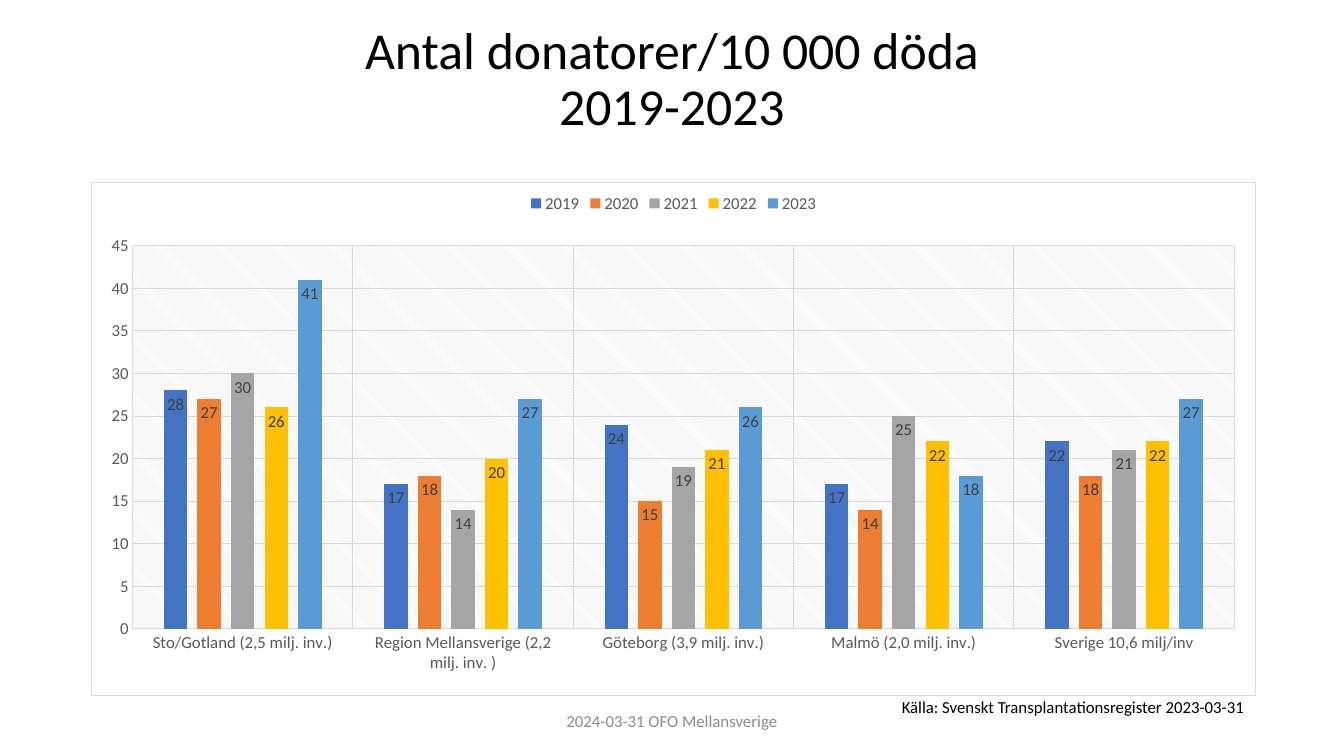
from dataclasses import dataclass

from lxml import etree
from pptx import Presentation
from pptx.chart import data
from pptx.dml.color import RGBColor
from pptx.enum import chart as kinds, text
from pptx.oxml import ns
from pptx.util import Pt

PX = 9525
FONT = "Calibri"
BLACK = RGBColor(0x00, 0x00, 0x00)
DARK = RGBColor(0x40, 0x40, 0x40)
GREY = RGBColor(0x59, 0x59, 0x59)
PALE = RGBColor(0x8C, 0x8C, 0x8C)
RULE = RGBColor(0xD9, 0xD9, 0xD9)
WHITE = RGBColor(0xFF, 0xFF, 0xFF)


@dataclass
class Box:
    left: int
    top: int
    width: int
    height: int

    def emu(self) -> list[int]:
        return [n * PX for n in (self.left, self.top, self.width, self.height)]


@dataclass
class Note:
    box: Box
    words: str
    color: RGBColor
    space: float


@dataclass
class Year:
    name: str
    color: RGBColor
    values: tuple[int, ...]


TITLE = Box(106, 18, 1068, 117)
GRAPH = Box(87, 173, 1109, 490)
NOTES = [
    Note(Box(777, 661, 490, 27), "Källa: Svenskt Transplantationsregister 2023-03-31", BLACK, 0.9),
    Note(Box(424, 667, 432, 38), "2024-03-31 OFO Mellansverige", PALE, 1.0),
]
REGIONS = [
    "Sto/Gotland (2,5 milj. inv.)",
    "Region Mellansverige (2,2 milj. inv. )",
    "Göteborg (3,9 milj. inv.)",
    "Malmö (2,0 milj. inv.)",
    "Sverige 10,6 milj/inv",
]
YEARS = [
    Year("2019", RGBColor(0x44, 0x72, 0xC4), (28, 17, 24, 17, 22)),
    Year("2020", RGBColor(0xED, 0x7D, 0x31), (27, 18, 15, 14, 18)),
    Year("2021", RGBColor(0xA5, 0xA5, 0xA5), (30, 14, 19, 25, 21)),
    Year("2022", RGBColor(0xFF, 0xC0, 0x00), (26, 20, 21, 22, 22)),
    Year("2023", RGBColor(0x5B, 0x9B, 0xD5), (41, 27, 26, 18, 27)),
]


def put(item, **values) -> None:
    for key, value in values.items():
        setattr(item, key, value)


def style(font, size: int, color: RGBColor) -> None:
    put(font, name=FONT, size=Pt(size))
    font.color.rgb = color


def rule(line) -> None:
    line.color.rgb = RULE
    line.width = Pt(0.75)


def node(inner: str, tag: str):
    return etree.fromstring(f'<c:{tag} {ns.nsdecls("c", "a")}>{inner}</c:{tag}>')


def solid(color: RGBColor) -> str:
    return f'<a:solidFill><a:srgbClr val="{color}"/></a:solidFill>'


def place(shape, box: Box) -> None:
    put(shape, **dict(zip(("left", "top", "width", "height"), box.emu())))


def head(slide) -> None:
    title = slide.shapes.title
    place(title, TITLE)
    put(title.text_frame, word_wrap=True, vertical_anchor=text.MSO_ANCHOR.MIDDLE,
        auto_size=text.MSO_AUTO_SIZE.NONE)
    para = title.text_frame.paragraphs[0]
    put(para, alignment=text.PP_ALIGN.CENTER, line_spacing=0.9)
    for part in ("Antal donatorer/10 000 döda", "2019-2023"):
        if para.runs:
            para.add_line_break()
        run = para.add_run()
        run.text = part
        style(run.font, 37, BLACK)


def write(slide, note: Note) -> None:
    frame = slide.shapes.add_textbox(*note.box.emu()).text_frame
    put(frame, word_wrap=True, vertical_anchor=text.MSO_ANCHOR.MIDDLE)
    para = frame.paragraphs[0]
    put(para, text=note.words, alignment=text.PP_ALIGN.CENTER,
        line_spacing=note.space, space_after=Pt(6))
    style(para.runs[0].font, 12, note.color)


def frame(chart) -> None:
    # Outer border, hatched plot area and its fixed position
    root = chart._chartSpace
    edge = f'<a:ln w="9525">{solid(RULE)}</a:ln>'
    root.find(ns.qn("c:chart")).addnext(node(solid(WHITE) + edge, "spPr"))
    area = root.find(".//" + ns.qn("c:plotArea"))
    for old in area.findall(ns.qn("c:layout")):
        area.remove(old)
    spots = {"x": 0.035, "y": 0.124, "w": 0.947, "h": 0.746}
    marks = '<c:layoutTarget val="inner"/><c:xMode val="edge"/><c:yMode val="edge"/>'
    marks += "".join(f'<c:{key} val="{val}"/>' for key, val in spots.items())
    area.insert(0, node(f"<c:manualLayout>{marks}</c:manualLayout>", "layout"))
    hatch = (f'<a:pattFill prst="ltDnDiag"><a:fgClr><a:srgbClr val="{RULE}"/></a:fgClr>'
             f'<a:bgClr><a:srgbClr val="{WHITE}"/></a:bgClr></a:pattFill>')
    area.append(node(hatch + "<a:ln><a:noFill/></a:ln>", "spPr"))


def graph(slide) -> None:
    table = data.CategoryChartData()
    table.categories = REGIONS
    for year in YEARS:
        table.add_series(year.name, year.values)
    kind = kinds.XL_CHART_TYPE.COLUMN_CLUSTERED
    chart = slide.shapes.add_chart(kind, *GRAPH.emu(), table).chart
    style(chart.font, 10, BLACK)
    put(chart, has_title=False, has_legend=True)
    put(chart.legend, position=kinds.XL_LEGEND_POSITION.TOP, include_in_layout=False)
    style(chart.legend.font, 12, GREY)

    # Axes
    for axis in (chart.category_axis, chart.value_axis):
        put(axis, has_major_gridlines=True, major_tick_mark=kinds.XL_TICK_MARK.NONE,
            minor_tick_mark=kinds.XL_TICK_MARK.NONE)
        rule(axis.major_gridlines.format.line)
        style(axis.tick_labels.font, 12, GREY)
    rule(chart.category_axis.format.line)
    chart.value_axis.format.line.fill.background()
    put(chart.value_axis, minimum_scale=0, maximum_scale=45, major_unit=5)

    # Bars and their values
    plot = chart.plots[0]
    put(plot, gap_width=267, overlap=-43, vary_by_categories=False)
    for bars, year in zip(plot.series, YEARS):
        bars.format.fill.solid()
        bars.format.fill.fore_color.rgb = year.color
        put(bars.data_labels, show_value=True,
            position=kinds.XL_LABEL_POSITION.INSIDE_END)
        style(bars.data_labels.font, 12, DARK)
    frame(chart)


def main() -> None:
    deck = Presentation()
    put(deck, slide_width=1280 * PX, slide_height=720 * PX)
    slide = deck.slides.add_slide(deck.slide_layouts.get_by_name("Title Only"))
    head(slide)
    for note in NOTES:
        write(slide, note)
    graph(slide)
    deck.save("out.pptx")


if __name__ == "__main__":
    main()
